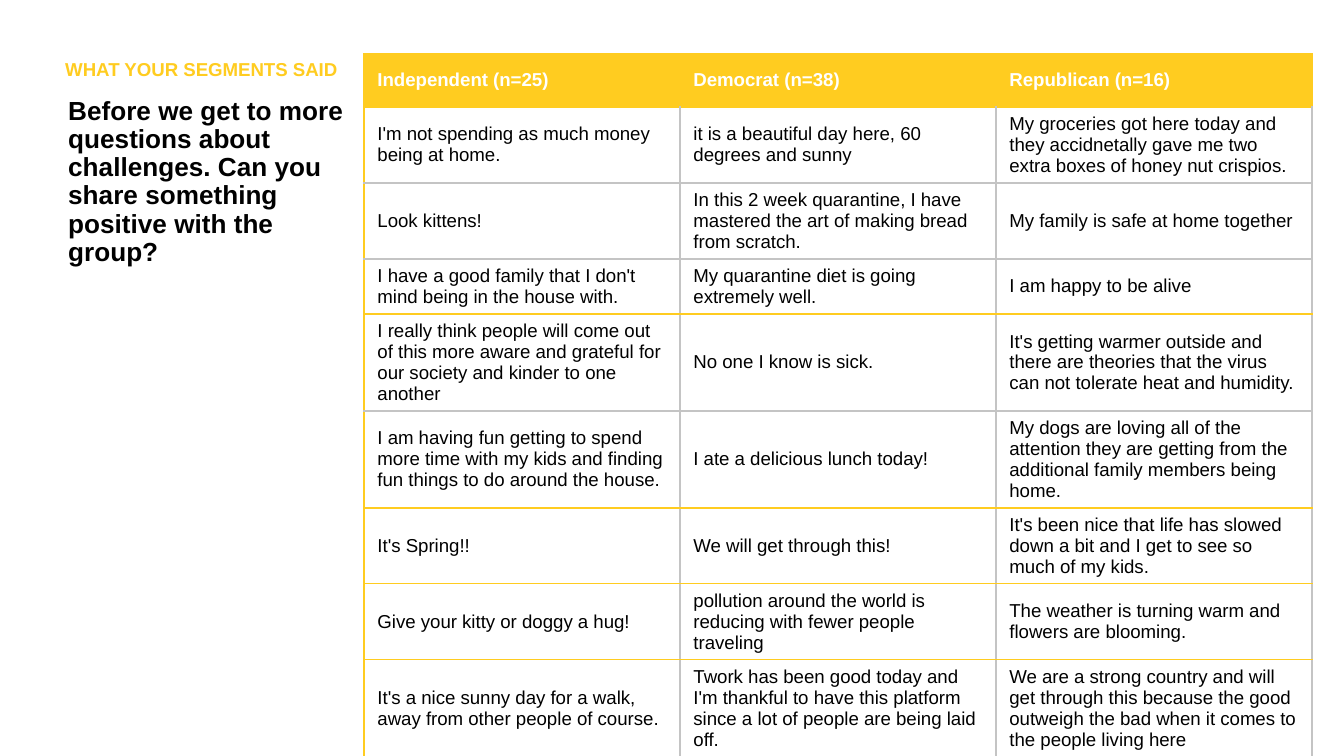
import pptx
import pptx.util
import pptx.dml.color
import pptx.enum.text
import pptx.oxml.ns
import lxml.etree

PX = 6804  # EMU per px
YELLOW = pptx.dml.color.RGBColor(0xFF, 0xCC, 0x20)
WHITE = pptx.dml.color.RGBColor(0xFF, 0xFF, 0xFF)
BLACK = pptx.dml.color.RGBColor(0x00, 0x00, 0x00)
GRAY = pptx.dml.color.RGBColor(0xC4, 0xC4, 0xC4)


def write(frame, text, size=10, color=BLACK, bold=False, line_spacing=None):
    frame.word_wrap = True
    paragraph = frame.paragraphs[0]
    paragraph.line_spacing = line_spacing
    run = paragraph.add_run()
    run.text = text
    run.font.name = "Arial"
    run.font.size = pptx.util.Pt(size)
    run.font.bold = bold
    run.font.color.rgb = color


def add_border(cell, side, color):
    line = lxml.etree.SubElement(
        cell._tc.get_or_add_tcPr(), pptx.oxml.ns.qn(f"a:ln{side}"),
        w=str(pptx.util.Pt(0.75)))
    fill = lxml.etree.SubElement(line, pptx.oxml.ns.qn("a:solidFill"))
    lxml.etree.SubElement(fill, pptx.oxml.ns.qn("a:srgbClr"), val=str(color))


deck = pptx.Presentation()
deck.slide_width = 1344 * PX
deck.slide_height = 756 * PX
slide = deck.slides.add_slide(deck.slide_layouts[6])

# Section label and question
label = slide.shapes.add_textbox(52 * PX, 54 * PX, 312 * PX, 38 * PX)
write(label.text_frame, "WHAT YOUR SEGMENTS SAID", color=YELLOW, bold=True,
      line_spacing=0.9)
question = slide.shapes.add_textbox(55 * PX, 91 * PX, 309 * PX, 593 * PX)
write(question.text_frame,
      "Before we get to more questions about challenges. Can you share "
      "something positive with the group?",
      size=14, bold=True, line_spacing=0.9)

# Answers by segment
answers = [
    ("Independent (n=25)", "Democrat (n=38)", "Republican (n=16)"),
    ("I'm not spending as much money being at home.",
     "it is a beautiful day here, 60 degrees and sunny",
     "My groceries got here today and they accidnetally gave me two extra "
     "boxes of honey nut crispios."),
    ("Look kittens!",
     "In this 2 week quarantine, I have mastered the art of making bread "
     "from scratch.",
     "My family is safe at home together"),
    ("I have a good family that I don't mind being in the house with.",
     "My quarantine diet is going extremely well.",
     "I am happy to be alive"),
    ("I really think people will come out of this more aware and grateful "
     "for our society and kinder to one another",
     "No one I know is sick.",
     "It's getting warmer outside and there are theories that the virus can "
     "not tolerate heat and humidity."),
    ("I am having fun getting to spend more time with my kids and finding "
     "fun things to do around the house.",
     "I ate a delicious lunch today!",
     "My dogs are loving all of the attention they are getting from the "
     "additional family members being home."),
    ("It's Spring!!",
     "We will get through this!",
     "It's been nice that life has slowed down a bit and I get to see so "
     "much of my kids."),
    ("Give your kitty or doggy a hug!",
     "pollution around the world is reducing with fewer people traveling",
     "The weather is turning warm and flowers are blooming."),
    ("It's a nice sunny day for a walk, away from other people of course.",
     "Twork has been good today and I'm thankful to have this platform since "
     "a lot of people are being laid off.",
     "We are a strong country and will get through this because the good "
     "outweigh the bad when it comes to the people living here"),
]
GRAY_RULES = (1, 2, 4)  # rows closed by a gray line
LINES = (3, 3, 2, 4, 4, 3, 3, 4)  # text lines in each answer row
row_heights = [53] + [21 * lines + 13 for lines in LINES]
segments = slide.shapes.add_table(
    len(answers), 3, 364 * PX, 54 * PX, 948 * PX, sum(row_heights) * PX).table
for column in segments.columns:
    column.width = 316 * PX

for r, row in enumerate(answers):
    segments.rows[r].height = row_heights[r] * PX
    header = r == 0
    for c, answer in enumerate(row):
        cell = segments.cell(r, c)
        cell.vertical_anchor = pptx.enum.text.MSO_ANCHOR.MIDDLE
        cell.margin_top = cell.margin_bottom = 3 * PX
        write(cell.text_frame, answer, color=WHITE if header else BLACK,
              bold=header)

        # Borders come before the fill in the cell properties
        inner = YELLOW if header else GRAY
        add_border(cell, "L", YELLOW if c == 0 else inner)
        add_border(cell, "R", inner)
        add_border(cell, "T", GRAY if r - 1 in GRAY_RULES else YELLOW)
        add_border(cell, "B", GRAY if r in GRAY_RULES else YELLOW)
        cell.fill.solid()
        cell.fill.fore_color.rgb = YELLOW if header else WHITE

deck.save("out.pptx")
